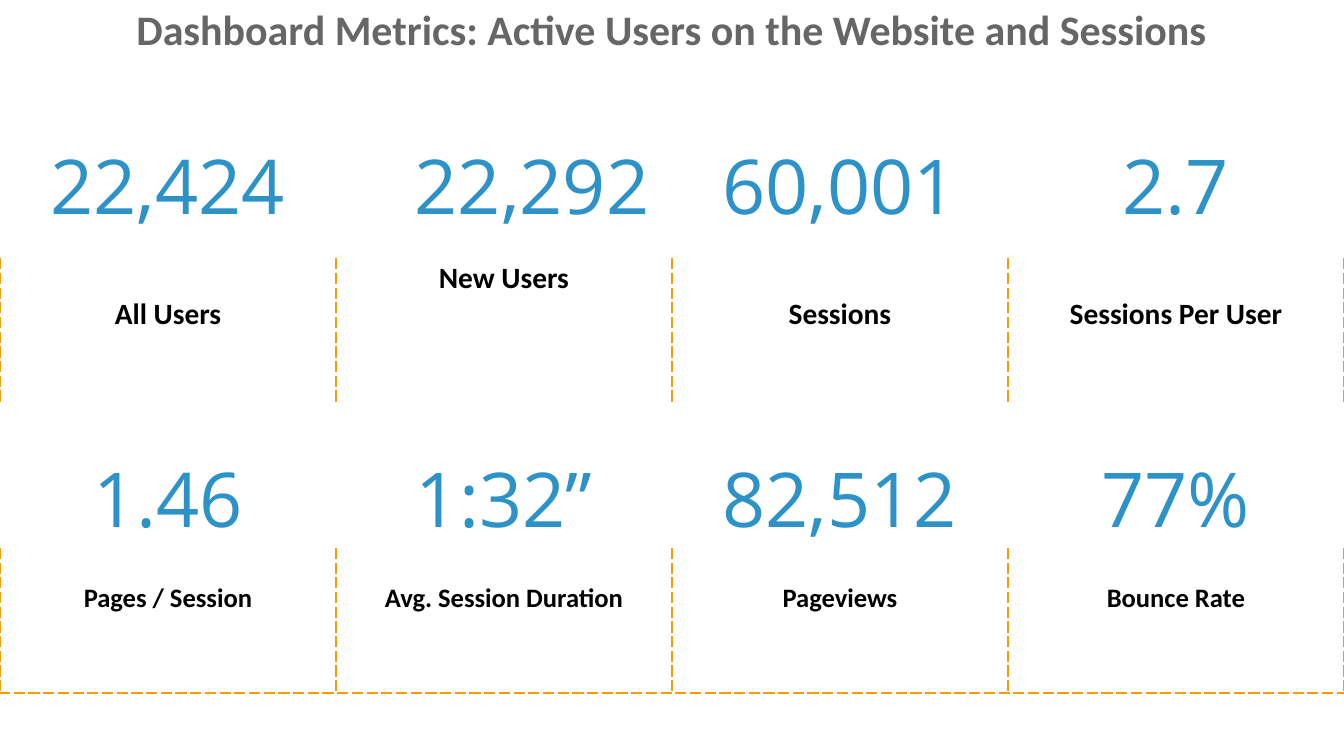
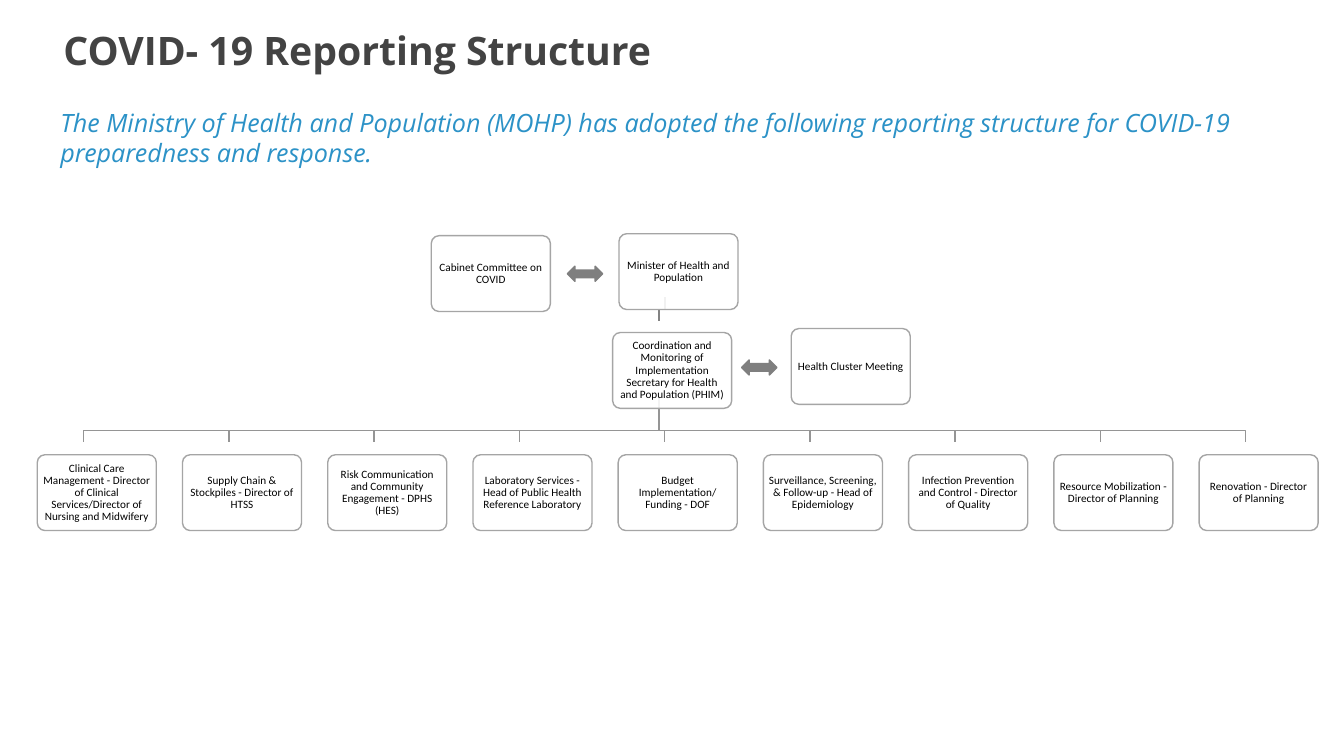
from lxml import etree
from pptx import Presentation
from pptx.dml.color import RGBColor
from pptx.enum.shapes import MSO_SHAPE as Shape
from pptx.enum.text import MSO_ANCHOR as Anchor, PP_ALIGN as Align
from pptx.oxml import parse_xml
from pptx.oxml.ns import nsdecls, qn
from pptx.util import Cm, Pt

WHITE = RGBColor(0xFF, 0xFF, 0xFF)
BLACK = RGBColor(0, 0, 0)
BLUE = RGBColor(0x2C, 0x92, 0xC7)
ORANGE = RGBColor(0xFF, 0x99, 0x00)
TITLE_GREY = RGBColor(0x66, 0x66, 0x66)
DARK_GREY = RGBColor(0x43, 0x43, 0x43)
ARROW_GREY = RGBColor(0x7F, 0x7F, 0x7F)
BOX_GREY = RGBColor(0xA5, 0xA5, 0xA5)
STEM_GREY = RGBColor(0x82, 0x82, 0x82)
BRANCH_GREY = RGBColor(0x95, 0x95, 0x95)

BODY_FONT = "Calibri"
DISPLAY_FONT = "Open Sans"
SLIDE_WIDTH, SLIDE_HEIGHT = 33.87, 19.05

METRIC_ROWS = [
    ["22,424", "22,292", "60,001", "2.7"],
    ["All Users", "New Users", "Sessions", "Sessions Per User"],
    ["1.46", "1:32”", "82,512", "77%"],
    ["Pages / Session", "Avg. Session Duration", "Pageviews", "Bounce Rate"],
]

BOX_WIDTH, BOX_HEIGHT = 3.0, 1.91
LEADERS = [
    ("Cabinet Committee on COVID", 10.87, 5.94),
    ("Health Cluster Meeting", 19.94, 8.28),
    ("Minister of Health and Population", 15.6, 5.89),
    ("Coordination and Monitoring of Implementation Secretary for Health "
     "and Population (PHIM)", 15.44, 8.38),
]
TEAMS = [
    "Clinical Care Management - Director of Clinical Services/Director of "
    "Nursing and Midwifery",
    "Supply Chain & Stockpiles - Director of HTSS",
    "Risk Communication and Community Engagement - DPHS (HES)",
    "Laboratory Services - Head of Public Health Reference Laboratory",
    "Budget Implementation/ Funding - DOF",
    "Surveillance, Screening, & Follow-up - Head of Epidemiology",
    "Infection Prevention and Control - Director of Quality",
    "Resource Mobilization - Director of Planning",
    "Renovation - Director of Planning",
]
TEAM_LEFT, TEAM_TOP, TEAM_PITCH = 0.94, 11.46, 3.66
TRUNK_X = 16.61


class Deck:
    def __init__(self):
        self.presentation = Presentation()
        self.presentation.slide_width = Cm(SLIDE_WIDTH)
        self.presentation.slide_height = Cm(SLIDE_HEIGHT)
        self.slide = None

    def new_slide(self):
        layout = self.presentation.slide_layouts[6]
        self.slide = self.presentation.slides.add_slide(layout)

    def fill_text(self, text_frame, text, size, color, font=BODY_FONT,
                  bold=False, italic=False, align=Align.LEFT, spacing=1.0):
        text_frame.text = text
        text_frame.word_wrap = True
        paragraph = text_frame.paragraphs[0]
        paragraph.alignment = align
        paragraph.line_spacing = spacing
        for run in paragraph.runs:
            run.font.name = font
            run.font.size = Pt(size)
            run.font.bold = bold
            run.font.italic = italic
            run.font.color.rgb = color

    def set_margins(self, holder, horizontal, vertical):
        """Set the text margins of a text frame or table cell."""
        holder.margin_left = holder.margin_right = Cm(horizontal)
        holder.margin_top = holder.margin_bottom = Cm(vertical)

    def text(self, text, left, top, width, height, size, color,
             margins=(0.25, 0.13), anchor=Anchor.TOP, **style):
        box = self.slide.shapes.add_textbox(
            Cm(left), Cm(top), Cm(width), Cm(height))
        text_frame = box.text_frame
        self.set_margins(text_frame, *margins)
        text_frame.vertical_anchor = anchor
        self.fill_text(text_frame, text, size, color, **style)

    def shape(self, kind, left, top, width, height, fill, line):
        shape = self.slide.shapes.add_shape(
            kind, Cm(left), Cm(top), Cm(width), Cm(height))
        shape.shadow.inherit = False
        shape.fill.solid()
        shape.fill.fore_color.rgb = fill
        shape.line.color.rgb = line
        shape.line.width = Pt(1)
        return shape

    def box(self, text, left, top):
        """Add a rounded, slightly transparent box of the organisation chart."""
        shape = self.shape(Shape.ROUNDED_RECTANGLE, left, top,
                           BOX_WIDTH, BOX_HEIGHT, WHITE, BOX_GREY)
        shape.adjustments[0] = 0.1
        fill_color = shape._element.spPr.find(qn("a:solidFill"))[0]
        etree.SubElement(fill_color, qn("a:alpha"), val="89000")
        text_frame = shape.text_frame
        self.set_margins(text_frame, 0.08, 0.08)
        text_frame.vertical_anchor = Anchor.MIDDLE
        self.fill_text(text_frame, text, 8, BLACK, align=Align.CENTER,
                       spacing=0.9)

    def double_arrow(self, left, top):
        self.shape(Shape.LEFT_RIGHT_ARROW, left, top, 0.89, 0.38,
                   ARROW_GREY, ARROW_GREY)

    def elbow(self, start, bend_y, end, color):
        """Draw a line that goes down, sideways at bend_y, and down again."""
        points = [start, (start[0], bend_y), (end[0], bend_y), end]
        points = [(Cm(x), Cm(y)) for x, y in points]
        builder = self.slide.shapes.build_freeform(*points[0])
        builder.add_line_segments(points[1:], close=False)
        shape = builder.convert_to_shape()
        shape.shadow.inherit = False
        shape.fill.background()
        shape.line.color.rgb = color
        shape.line.width = Pt(1)

    def dashed_border(self, cell, sides):
        """Draw the named sides (L, R, T, B, in that order) of a cell."""
        properties = cell._tc.get_or_add_tcPr()
        for side in sides:
            properties.append(parse_xml(
                f'<a:ln{side} {nsdecls("a")} w="{Pt(1.5)}"><a:solidFill>'
                f'<a:srgbClr val="{ORANGE}"/></a:solidFill>'
                f'<a:prstDash val="dash"/></a:ln{side}>'))

    def metrics_table(self, rows, top, row_height):
        columns = len(rows[0])
        table = self.slide.shapes.add_table(
            len(rows), columns, 0, Cm(top), Cm(SLIDE_WIDTH),
            Cm(row_height * len(rows))).table
        table.first_row = table.horz_banding = False
        for column in table.columns:
            column.width = Cm(SLIDE_WIDTH / columns)
        for row_index, texts in enumerate(rows):
            table.rows[row_index].height = Cm(row_height)
            upper_half = row_index < 2
            for column_index, text in enumerate(texts):
                cell = table.cell(row_index, column_index)
                self.set_margins(cell, 0.08, 0.05)
                if row_index % 2:
                    self.dashed_border(cell, "LR" if upper_half else "LRB")
                    self.fill_text(cell.text_frame, text,
                                   21 if upper_half else 19, BLACK, bold=True,
                                   align=Align.CENTER,
                                   spacing=1.0 if text == "New Users" else 2.0)
                else:
                    cell.vertical_anchor = (
                        Anchor.MIDDLE if upper_half else Anchor.BOTTOM)
                    self.fill_text(cell.text_frame, text, 54, BLUE,
                                   DISPLAY_FONT, align=Align.CENTER,
                                   spacing=0.9)
                cell.fill.solid()
                cell.fill.fore_color.rgb = WHITE
        table.cell(0, 1).margin_left = Cm(1.5)


def add_metrics_slide(deck):
    deck.new_slide()
    deck.metrics_table(METRIC_ROWS, 2.87, 3.65)
    deck.text("Dashboard Metrics: Active Users on the Website and Sessions",
              0, 0, SLIDE_WIDTH, 1.63, 30, TITLE_GREY, anchor=Anchor.MIDDLE,
              bold=True, align=Align.CENTER, spacing=0.9)


def add_structure_slide(deck):
    deck.new_slide()
    deck.text("COVID- 19 Reporting Structure", 1.27, 0.33, 31.5, 2.24, 28,
              DARK_GREY, margins=(0.33, 0.33), font=DISPLAY_FONT, bold=True)
    team_lefts = [TEAM_LEFT + TEAM_PITCH * i for i in range(len(TEAMS))]
    for left in team_lefts:
        deck.elbow((TRUNK_X, 9.98), 10.85, (left + 1.17, 11.13), BRANCH_GREY)
    deck.elbow((16.76, 7.49), 7.8, (TRUNK_X, 8.08), STEM_GREY)
    for text, left, top in LEADERS:
        deck.box(text, left, top)
    for text, left in zip(TEAMS, team_lefts):
        deck.box(text, left, TEAM_TOP)
    deck.double_arrow(14.3, 6.71)
    deck.double_arrow(18.69, 9.07)
    deck.text("The Ministry of Health and Population (MOHP) has adopted the "
              "following reporting structure for COVID-19 preparedness and "
              "response.", 1.27, 2.57, 31.5, 1.8, 18, BLUE,
              font=DISPLAY_FONT, italic=True)


def main():
    deck = Deck()
    add_metrics_slide(deck)
    add_structure_slide(deck)
    deck.presentation.save("out.pptx")


if __name__ == "__main__":
    main()
